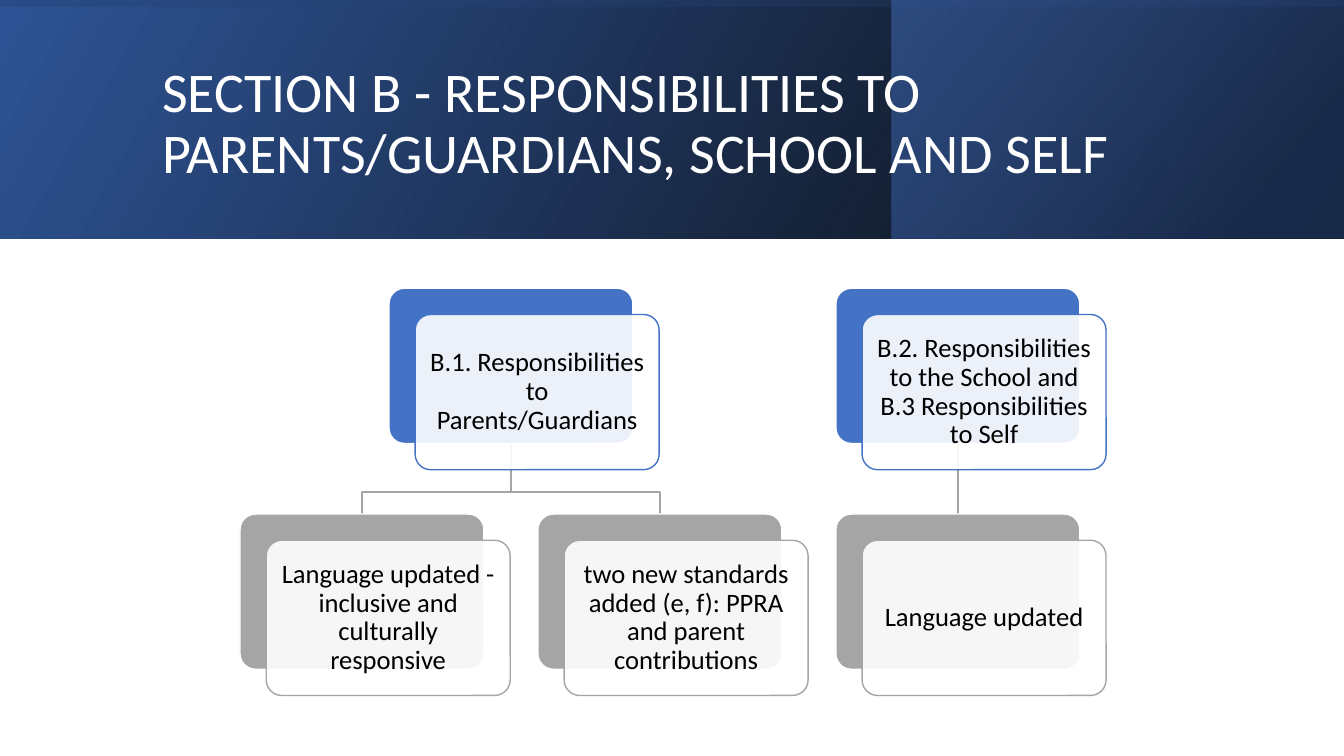
from lxml import etree
from pptx import Presentation
from pptx.dml.color import RGBColor
from pptx.enum.shapes import MSO_CONNECTOR as CONNECTOR, MSO_SHAPE as SHAPE
from pptx.enum.text import MSO_ANCHOR as ANCHOR, PP_ALIGN as ALIGN
from pptx.oxml.ns import qn
from pptx.util import Inches, Pt

WHITE = RGBColor(0xFF, 0xFF, 0xFF)
BLACK = RGBColor(0x00, 0x00, 0x00)
BLUE = RGBColor(0x44, 0x72, 0xC4)
DEEP_BLUE = RGBColor(0x2F, 0x55, 0x97)
NAVY = RGBColor(0x20, 0x38, 0x64)
GRAY = RGBColor(0xA5, 0xA5, 0xA5)

TITLE = "SECTION B - RESPONSIBILITIES TO PARENTS/GUARDIANS, SCHOOL AND SELF"
TREES = [
    ("B.1. Responsibilities to Parents/Guardians",
     ["Language updated - inclusive and culturally responsive",
      "two new standards added (e, f): PPRA and parent contributions"]),
    ("B.2. Responsibilities to the School and B.3 Responsibilities to Self",
     ["Language updated"]),
]
CARD_WIDTH, CARD_HEIGHT, CARD_OFFSET = 2.42, 1.54, 0.26
COLUMN_STEP, ROW_STEP, BEND_GAP = 2.955, 2.24, 0.22


def write_text(shape, text, font_format, frame_format, align):
    """Fill the shape with one paragraph of formatted text."""
    frame = shape.text_frame
    for name, value in frame_format.items():
        setattr(frame, name, value)
    paragraph = frame.paragraphs[0]
    paragraph.alignment, paragraph.line_spacing = align, 0.9
    run = paragraph.add_run()
    run.text = text
    color = font_format["color"]
    for name in ("name", "size"):
        setattr(run.font, name, font_format[name])
    run.font.color.rgb = color


def set_alpha(color_element, percent):
    """Give a colour element its opacity."""
    etree.SubElement(color_element, qn("a:alpha")).set("val", str(percent * 1000))


def add_gradient_panel(slide, box, stops, angle, rotation=0):
    """Add a mirrored rectangle with a translucent linear gradient."""
    shape = slide.shapes.add_shape(SHAPE.RECTANGLE, *map(Inches, box))
    shape.shadow.inherit = False
    shape.line.fill.background()
    shape.rotation = rotation
    properties = shape._element.spPr
    properties.find(qn("a:xfrm")).set("flipH", "1")
    gradient = etree.Element(qn("a:gradFill"), rotWithShape="1")
    stop_list = etree.SubElement(gradient, qn("a:gsLst"))
    for position, color, opacity in stops:
        stop = etree.SubElement(stop_list, qn("a:gs"), pos=str(position * 1000))
        set_alpha(etree.SubElement(stop, qn("a:srgbClr"), val=str(color)), opacity)
    etree.SubElement(gradient, qn("a:lin"), ang=str(angle * 60000), scaled="0")
    properties.find(qn("a:prstGeom")).addnext(gradient)


def add_banner(slide, left, top, width, height):
    """Add the layered gradient banner with the title."""
    add_gradient_panel(slide, (left, top, width, height),
                       [(0, BLACK, 96), (100, DEEP_BLUE, 100)], 330)
    add_gradient_panel(slide, (left + 8.84, top, width - 8.84, height),
                       [(19, NAVY, 68), (100, BLUE, 48)], 320)
    turned_box = (left + (width - height) / 2, top + (height - width) / 2, height, width)
    add_gradient_panel(slide, turned_box,
                       [(23, DEEP_BLUE, 16), (99, BLACK, 45)], 350, 270)
    title = slide.shapes.add_textbox(*map(Inches, (left + 1.51, top + 0.38, 10.63, 1.72)))
    write_text(title, TITLE, {"name": "Calibri", "size": Pt(40), "color": WHITE},
               {"word_wrap": True, "vertical_anchor": ANCHOR.MIDDLE}, ALIGN.LEFT)


def add_card(slide, left, top, text, accent):
    """Add a coloured back plate and the offset translucent card with its text."""
    layers = [(0, accent, WHITE), (CARD_OFFSET, WHITE, accent)]
    for offset, fill, line in layers:
        box = (left + offset, top + offset, CARD_WIDTH, CARD_HEIGHT)
        card = slide.shapes.add_shape(SHAPE.ROUNDED_RECTANGLE, *map(Inches, box))
        card.shadow.inherit = False
        card.adjustments[0] = 0.1
        card.fill.solid()
        card.fill.fore_color.rgb = fill
        card.line.color.rgb = line
        card.line.width = Pt(1)
    set_alpha(card._element.spPr.find(qn("a:solidFill"))[0], 90)
    margins = {f"margin_{side}": Inches(0.08) for side in ("left", "top", "right", "bottom")}
    write_text(card, text, {"name": "Calibri", "size": Pt(19), "color": BLACK},
               {"word_wrap": True, "vertical_anchor": ANCHOR.MIDDLE, **margins}, ALIGN.CENTER)


def add_branch(slide, start_x, start_y, end_x, end_y):
    """Join a parent to a child, with a bend when they are not aligned."""
    start, end = (Inches(start_x), Inches(start_y)), (Inches(end_x), Inches(end_y))
    if start[0] == end[0]:
        branch = slide.shapes.add_connector(CONNECTOR.STRAIGHT, *start, *end)
        etree.SubElement(branch._element.spPr, qn("a:effectLst"))
    else:
        bend_y = Inches(end_y - BEND_GAP)
        builder = slide.shapes.build_freeform(*start)
        builder.add_line_segments([(start[0], bend_y), (end[0], bend_y), end], close=False)
        branch = builder.convert_to_shape()
        branch.shadow.inherit = False
        branch.fill.background()
    branch.line.color.rgb = GRAY
    branch.line.width = Pt(1)


def add_hierarchy(slide, left, top):
    """Add the trees side by side, each parent centred over its children."""
    cards, column = [], 0
    child_top = top + ROW_STEP
    for parent, children in TREES:
        parent_left = left + (column + (len(children) - 1) / 2) * COLUMN_STEP
        cards.append((parent_left, top, parent, BLUE))
        for child in children:
            child_left = left + column * COLUMN_STEP
            cards.append((child_left, child_top, child, GRAY))
            add_branch(slide, parent_left + CARD_WIDTH / 2, top + CARD_HEIGHT,
                       child_left + CARD_WIDTH / 2, child_top)
            column += 1
    for card in cards:
        add_card(slide, *card)


def main():
    """Build and save the presentation."""
    presentation = Presentation()
    presentation.slide_width, presentation.slide_height = Inches(13.33), Inches(7.5)
    slide = presentation.slides.add_slide(presentation.slide_layouts[6])
    add_banner(slide, 0, 0, 13.33, 2.37)
    add_hierarchy(slide, 2.38, 2.86)
    presentation.save("out.pptx")


if __name__ == "__main__":
    main()
